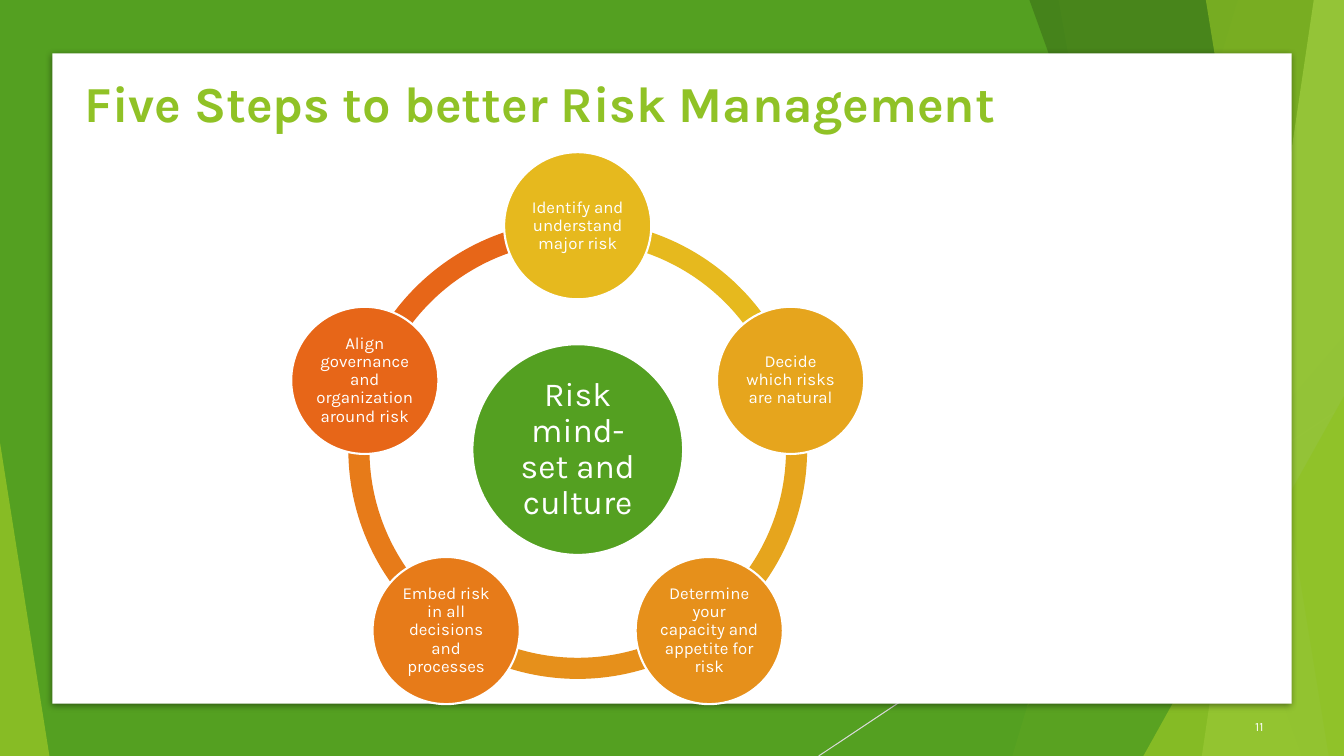
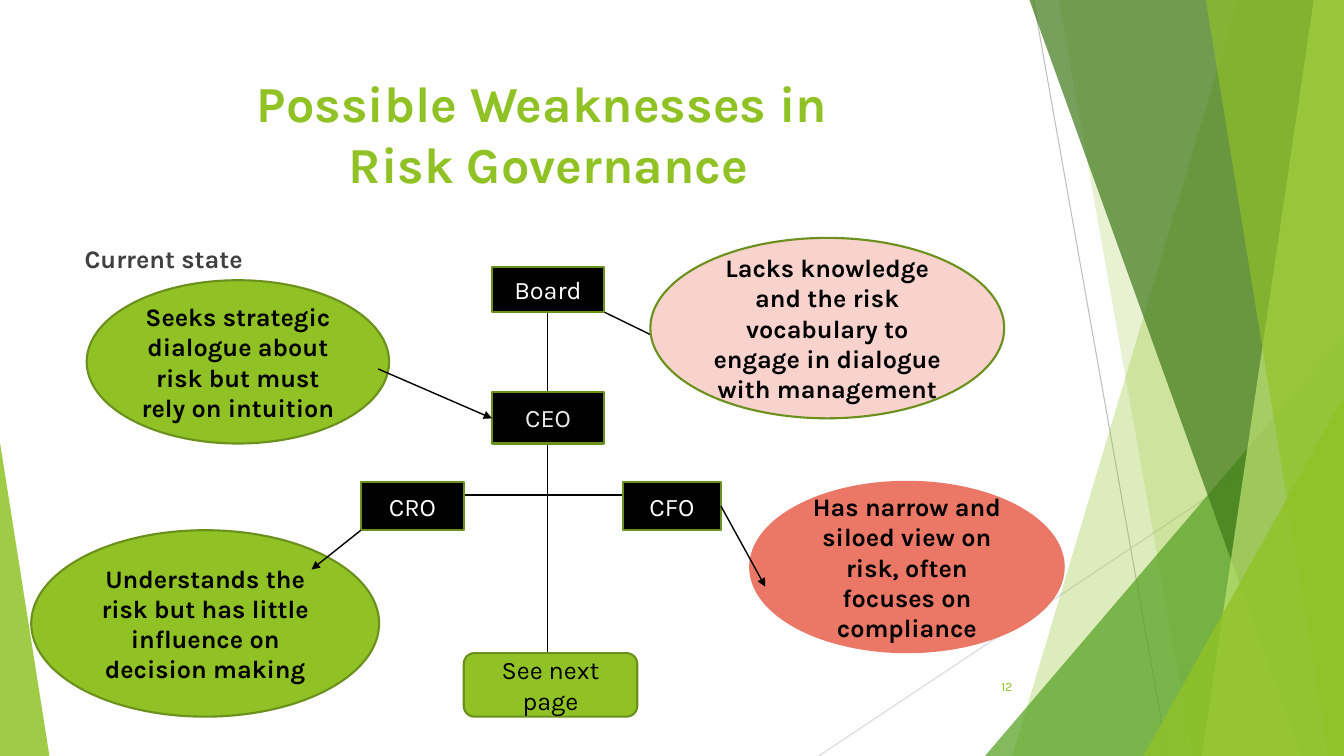
from math import cos, radians, sin

from lxml.etree import SubElement
from pptx import Presentation
from pptx.dml.color import RGBColor
from pptx.enum.shapes import MSO_CONNECTOR_TYPE as Link, MSO_SHAPE as Preset
from pptx.enum.text import MSO_ANCHOR as Anchor, PP_ALIGN as Align
from pptx.oxml.ns import qn
from pptx.util import Inches, Pt

FONT = "Karla"
WIDTH, HEIGHT = 13.33, 7.5

LIME = RGBColor(0x90, 0xC2, 0x26)
PALE_LIME = RGBColor(0xC0, 0xE4, 0x74)
GREEN = RGBColor(0x54, 0xA0, 0x21)
DARK_GREEN = RGBColor(0x3F, 0x78, 0x19)
OLIVE = RGBColor(0x6B, 0x90, 0x1C)
WHITE = RGBColor(0xFF, 0xFF, 0xFF)
BLACK = RGBColor(0x00, 0x00, 0x00)
CHARCOAL = RGBColor(0x40, 0x40, 0x40)
MIST = RGBColor(0xEB, 0xEB, 0xEB)
SILVER = RGBColor(0xBF, 0xBF, 0xBF)
LIGHT_GREY = RGBColor(0xD9, 0xD9, 0xD9)
PINK = RGBColor(0xF8, 0xD2, 0xCC)
CORAL = RGBColor(0xEB, 0x77, 0x66)
YELLOW = RGBColor(0xE6, 0xB9, 0x1E)
AMBER = RGBColor(0xE6, 0xA5, 0x1D)
ORANGE = RGBColor(0xE6, 0x90, 0x1B)
DEEP_ORANGE = RGBColor(0xE7, 0x7B, 0x19)
RED_ORANGE = RGBColor(0xE7, 0x66, 0x18)

# Background facets, back to front. Bands: top left, top right, bottom left.
# Wedges: left, top, width, apex position.
FACETS = [
    ("band", (12.28, WIDTH, 10.04), LIME, 30),
    ("band", (10.5, WIDTH, 11.83), LIME, 20),
    ("wedge", (9.77, 3.33, 3.56, 1), GREEN, 72),
    ("band", (10.21, WIDTH, 12.91), DARK_GREEN, 70),
    ("band", (13.03, WIDTH, 11.92), PALE_LIME, 70),
    ("band", (11.96, WIDTH, 13.18), LIME, 65),
    ("wedge", (11.34, 3.93, 1.99, 1), LIME, 80),
    ("wedge", (0, 4.39, 0.49, 0), LIME, 85),
]
STEEP_LINE = ((10.25, 0), (11.58, HEIGHT), SILVER)
FLAT_LINE = ((WIDTH, 4.03), (8.12, HEIGHT), LIGHT_GREY)

STEPS = [
    ("Identify and understand major risk", YELLOW),
    ("Decide which risks are natural", AMBER),
    ("Determine your capacity and appetite for risk", ORANGE),
    ("Embed risk in all decisions and processes", DEEP_ORANGE),
    ("Align governance and organization around risk", RED_ORANGE),
]

# Box, text, fill, text colour
ROLES = [
    ((4.88, 2.65, 1.11, 0.45), "Board", WHITE),
    ((4.88, 3.89, 1.11, 0.51), "CEO", MIST),
    ((3.58, 4.78, 1.02, 0.48), "CRO", WHITE),
    ((6.18, 4.78, 0.97, 0.48), "CFO", WHITE),
]
WEAKNESSES = [
    ((6.45, 2.36, 3.51, 1.79), PINK, OLIVE,
     "Lacks knowledge and the risk vocabulary to engage in dialogue with management"),
    ((0.86, 2.78, 3, 1.62), LIME, OLIVE,
     "Seeks strategic dialogue about risk but must rely on intuition"),
    ((0.31, 5.26, 3.45, 1.85), LIME, OLIVE,
     "Understands the risk but has little influence on decision making"),
    ((7.44, 4.78, 3.11, 1.69), CORAL, CORAL,
     "Has narrow and siloed view on risk, often focuses on compliance"),
]
TRUNK_X, BRANCH_Y = 5.43, 4.91
CHART_LINES = [
    ((TRUNK_X, 3.09), (TRUNK_X, 4.15)),
    ((TRUNK_X, 4.41), (TRUNK_X, 6.48)),
    ((4.42, BRANCH_Y), (6.32, BRANCH_Y)),
]
BOARD_ARROW = ((5.98, 3.09), (7.15, 3.66))
ROLE_ARROWS = [
    ((3.75, 3.66), (4.88, 4.15)),
    ((3.58, 5.26), (3.09, 5.65)),
    ((7.15, 5.02), (7.59, 5.82)),
]


def write(shape, text, size, color, bold=False, align=Align.CENTER,
          anchor=Anchor.MIDDLE, inset=None, spacing=None):
    """Fill a shape with one formatted paragraph."""
    frame = shape.text_frame
    frame.word_wrap = True
    frame.vertical_anchor = anchor
    if inset is not None:
        for side in ("left", "top", "right", "bottom"):
            setattr(frame, f"margin_{side}", Inches(inset))
    para = frame.paragraphs[0]
    para.text = text
    para.alignment = align
    para.line_spacing = spacing
    formats = {"name": FONT, "size": Pt(size), "bold": bold}
    for span in para.runs:
        for name, value in formats.items():
            setattr(span.font, name, value)
        span.font.color.rgb = color


def paint(shape, fill, line=None, opacity=None):
    shape.shadow.inherit = False
    shape.fill.solid()
    shape.fill.fore_color.rgb = fill
    if opacity is not None:
        color = shape.element.spPr.find(qn("a:solidFill"))[0]
        SubElement(color, qn("a:alpha"), val=str(opacity * 1000))
    if line is None:
        shape.line.fill.background()
    else:
        shape.line.color.rgb = line
        shape.line.width = Pt(1.5)


def add_preset(page, preset, box, fill, line=None, opacity=None, adjust=()):
    shape = page.shapes.add_shape(preset, *map(Inches, box))
    for index, value in enumerate(adjust):
        shape.adjustments[index] = value
    paint(shape, fill, line, opacity)
    return shape


def add_text(page, box, text, size, color, **formats):
    write(page.shapes.add_textbox(*map(Inches, box)), text, size, color, **formats)


def add_line(page, start, end, color=BLACK, width=1, arrow=False):
    line = page.shapes.add_connector(
        Link.STRAIGHT, *map(Inches, (*start, *end)))
    line.line.color.rgb = color
    line.line.width = Pt(width)
    if arrow:
        SubElement(line.line._get_or_add_ln(), qn("a:tailEnd"), type="triangle")
    SubElement(line.element.spPr, qn("a:effectLst"))


def add_card_shadow(card):
    effects = card.element.spPr.find(qn("a:effectLst"))
    shadow = SubElement(effects, qn("a:outerShdw"), blurRad=str(Pt(5)),
                        dist=str(Pt(1.4)), dir=str(90 * 60000), rotWithShape="0")
    color = SubElement(shadow, qn("a:srgbClr"), val=str(BLACK))
    SubElement(color, qn("a:alpha"), val="43000")


def add_facets(page, lines):
    for start, end, color in lines:
        add_line(page, start, end, color, 0.75)
    for kind, place, color, opacity in FACETS:
        if kind == "band":
            top_left, top_right, bottom_left = place
            outline = page.shapes.build_freeform(
                Inches(top_left), 0, scale=1.0)
            corners = [(top_right, 0), (top_right, HEIGHT), (bottom_left, HEIGHT)]
            outline.add_line_segments(
                [(Inches(x), Inches(y)) for x, y in corners], close=True)
            paint(outline.convert_to_shape(), color, opacity=opacity)
        else:
            left, top, width, apex = place
            add_preset(page, Preset.ISOSCELES_TRIANGLE,
                       (left, top, width, HEIGHT - top), color,
                       opacity=opacity, adjust=[apex])


def add_title(page, text, align):
    add_text(page, (0.74, 0.67, 9.4, 1.44), text, 36, LIME, bold=True,
             align=align, anchor=Anchor.TOP)


def add_page_number(page, left, top, number, color):
    add_text(page, (left, top, 0.75, 0.4), number, 9, color, align=Align.RIGHT)


def add_disc(page, x, y, diameter, fill, text, size, inset):
    box = (x - diameter / 2, y - diameter / 2, diameter, diameter)
    disc = add_preset(page, Preset.OVAL, box, fill, WHITE)
    write(disc, text, size, WHITE, inset=inset, spacing=0.9)


def add_step_cycle(page, x, y):
    ring, orbit = 4.55, 2.22
    turn = 360 / len(STEPS)
    angles = [(270 + turn * index) % 360 for index in range(len(STEPS))]
    # Ring segments; an adjustment of 0.6 is one degree
    for angle, (_, color) in zip(angles, STEPS):
        add_preset(page, Preset.BLOCK_ARC,
                   (x - ring / 2, y - ring / 2, ring, ring), color,
                   adjust=[angle * 0.6, (angle + turn) % 360 * 0.6, 0.046])
    # Centre and steps
    add_disc(page, x, y, 2.09, GREEN, "Risk mind- set and culture", 24, 0.03)
    for angle, (text, color) in zip(angles, STEPS):
        add_disc(page, x + orbit * cos(radians(angle)),
                 y + orbit * sin(radians(angle)), 1.46, color, text, 12, 0.02)


def build_steps_page(page):
    add_preset(page, Preset.RECTANGLE, (0, 0, WIDTH, HEIGHT), GREEN)
    add_facets(page, [FLAT_LINE])
    card = add_preset(page, Preset.RECTANGLE, (0.52, 0.53, 12.29, 6.45), WHITE)
    add_card_shadow(card)
    add_page_number(page, 11.88, 7.01, "11", WHITE)
    add_title(page, "Five Steps to better Risk Management", Align.LEFT)
    add_step_cycle(page, 5.73, 4.46)


def build_governance_page(page):
    add_facets(page, [STEEP_LINE, FLAT_LINE])
    add_title(page, "Possible Weaknesses in \vRisk Governance", Align.CENTER)
    add_text(page, (0.74, 2.36, 9.4, 0.45), "Current state", 18, CHARCOAL,
             bold=True, align=Align.LEFT, anchor=Anchor.TOP)
    # Lines that run behind the boxes
    for start, end in CHART_LINES:
        add_line(page, start, end)
    add_line(page, *BOARD_ARROW, arrow=True)
    # Roles and their weaknesses
    for box, text, color in ROLES:
        write(add_preset(page, Preset.RECTANGLE, box, BLACK, OLIVE),
              text, 18, color)
    for box, fill, line, text in WEAKNESSES:
        write(add_preset(page, Preset.OVAL, box, fill, line),
              text, 18, BLACK, bold=True)
    for start, end in ROLE_ARROWS:
        add_line(page, start, end, arrow=True)
    next_box = add_preset(page, Preset.ROUNDED_RECTANGLE,
                          (4.6, 6.48, 1.72, 0.63), LIME, OLIVE)
    write(next_box, "See next page", 18, BLACK)
    add_page_number(page, 9.39, 6.61, "12", LIME)


def main():
    deck = Presentation()
    deck.slide_width, deck.slide_height = Inches(WIDTH), Inches(HEIGHT)
    for build in (build_steps_page, build_governance_page):
        build(deck.slides.add_slide(deck.slide_layouts[6]))
    deck.save("out.pptx")


if __name__ == "__main__":
    main()
